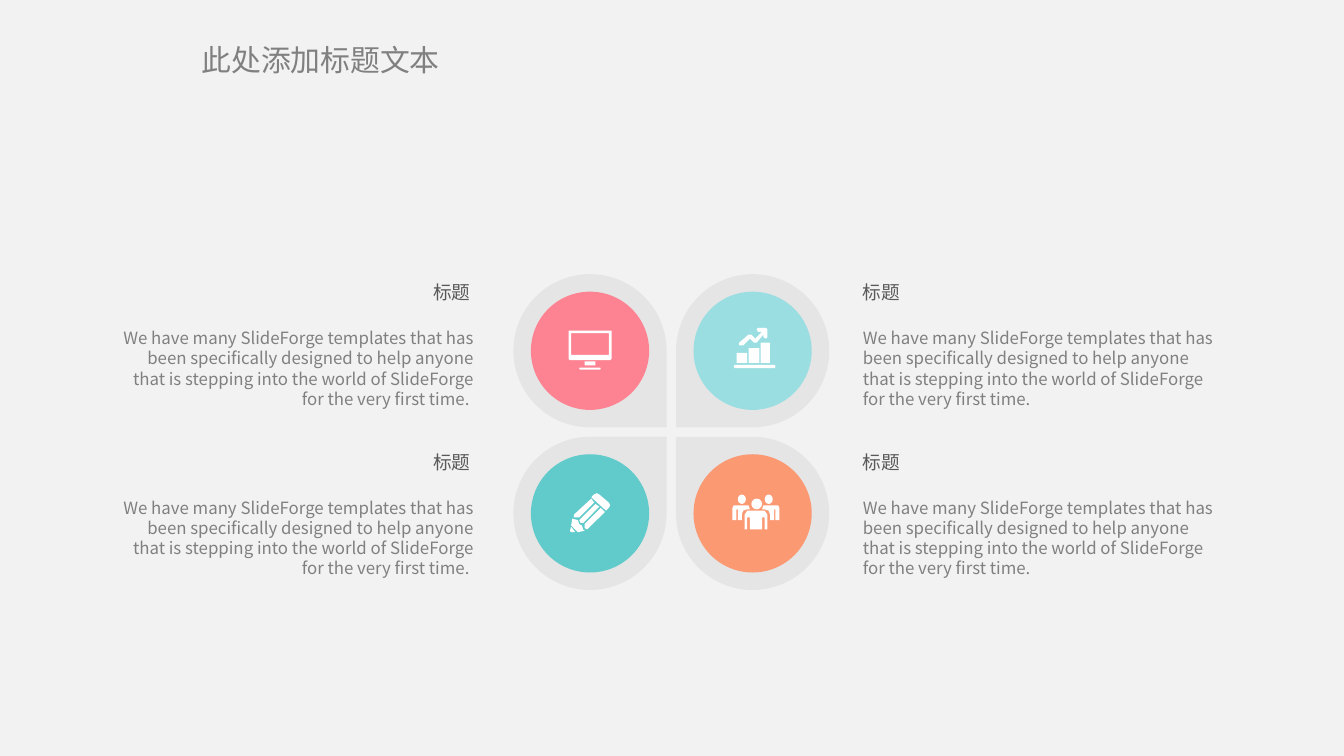
from lxml.etree import SubElement
from pptx import Presentation
from pptx.dml.color import RGBColor as RGB
from pptx.enum.shapes import MSO_SHAPE as Shape
from pptx.enum.text import MSO_ANCHOR as Anchor, PP_ALIGN as Align
from pptx.oxml.ns import qn
from pptx.util import Inches, Pt

FONT = "Noto Sans CJK SC"
PAPER = RGB(0xF2, 0xF2, 0xF2)
PETAL = RGB(0xD9, 0xD9, 0xD9)
WHITE = RGB(0xFF, 0xFF, 0xFF)
DARK = RGB(0x59, 0x59, 0x59)
GREY = RGB(0x80, 0x80, 0x80)
PINK = RGB(0xFD, 0x83, 0x92)
AQUA = RGB(0x9B, 0xDE, 0xE2)
TEAL = RGB(0x61, 0xCA, 0xCB)
CORAL = RGB(0xFB, 0x99, 0x73)

BODY = ("We have many SlideForge templates that has been specifically "
        "designed to help anyone that is stepping into the world of "
        "SlideForge for the very first time.")

SIZE, STEP, DISC = 1.14, 1.21, 0.88   # petal side, petal pitch, disc diameter
UNIT = Inches(0.01)                   # icon grid, from the petal's corner

# Icon parts: (preset, left, top, width, height) or a list of outlines
MONITOR = [
    [[(42, 41.5), (72, 41.5), (73, 42.5), (73, 63), (72, 64), (42, 64),
      (41, 63), (41, 42.5)],
     [(43, 44), (71, 44), (71, 60), (43, 60)]],
    (Shape.RECTANGLE, 53, 65, 8, 3),
    (Shape.ROUNDED_RECTANGLE, 49, 69.5, 16, 1.5),
]
CHART = [
    (Shape.ROUNDED_RECTANGLE, 43, 67.5, 31, 2.5),
    (Shape.RECTANGLE, 63, 51, 7, 15),
    (Shape.RECTANGLE, 54, 55, 8, 11),
    (Shape.RECTANGLE, 45, 58.5, 8, 7.5),
    [[(50, 53), (55, 48), (58, 51), (60, 51), (65, 45), (65, 47), (67, 48),
      (68, 47), (68, 41), (67, 40), (61, 40), (60, 41), (61, 43), (64, 43),
      (59, 48), (56, 45), (54, 45), (47, 51), (47, 53)]],
]
PENCIL = [
    [[(42, 70), (43, 71), (46, 71), (43, 67)]],
    [[(71, 49), (64, 43), (62, 42), (60, 43), (58, 45), (69, 55), (71, 53),
      (72, 51)]],
    [[(61, 50), (50, 61), (49, 62), (50, 64), (52, 64), (64, 52)]],
    [[(45, 60), (48, 60), (49, 60), (60, 49), (58, 46), (45, 58)]],
    [[(52, 69), (51, 66), (49, 65), (48, 62), (44, 61), (44, 60), (43, 66),
      (48, 71), (53, 70)]],
    [[(53, 65), (53, 68), (55, 69), (68, 56), (65, 53)]],
]
SIDE = [(74, 51), (65, 51), (64, 54), (66, 54), (69, 55), (70, 58), (70, 62),
        (73, 62), (73, 54), (74, 54), (74, 62), (77, 62), (77, 53), (76, 51)]
PEOPLE = [
    (Shape.OVAL, 66, 43, 6, 7),
    (Shape.OVAL, 46, 43, 6, 7),
    (Shape.OVAL, 56, 46, 8, 8),
    [[(66, 55), (53, 55), (51, 58), (51, 69), (53, 69), (53, 60), (55, 60),
      (55, 69), (64, 69), (64, 60), (66, 60), (66, 69), (68, 69), (68, 58)]],
    [SIDE],
    [[(119 - x, y) for x, y in SIDE]],
]

# Column, row, turn of the petal, disc colour, icon
ITEMS = [
    (0, 0, 90, PINK, MONITOR),
    (1, 0, 180, AQUA, CHART),
    (0, 1, 0, TEAL, PENCIL),
    (1, 1, 270, CORAL, PEOPLE),
]


def paint(shape, color):
    shape.shadow.inherit = False
    shape.fill.solid()
    shape.fill.fore_color.rgb = color
    shape.line.fill.background()


def style(par, size, color, align):
    par.alignment = align
    par.font.name, par.font.size = FONT, Pt(size)
    par.font.color.rgb = color
    ea = SubElement(par.font._element, qn("a:ea"))
    ea.set("typeface", FONT)


def add_title(slide, x, y, w, h):
    title = slide.shapes.title
    title.left, title.top = Inches(x), Inches(y)
    title.width, title.height = Inches(w), Inches(h)
    frame = title.text_frame
    frame.text = "此处添加标题文本"
    frame.word_wrap = False
    frame.vertical_anchor = Anchor.TOP
    style(frame.paragraphs[0], 16, GREY, Align.LEFT)


def add_icon(slide, x, y, parts):
    shapes = slide.shapes.add_group_shape().shapes
    left, top = Inches(x), Inches(y)
    for part in parts:
        if isinstance(part, tuple):
            kind, *box = part
            px, py, w, h = (int(v * UNIT) for v in box)
            shape = shapes.add_shape(kind, left + px, top + py, w, h)
            if kind == Shape.ROUNDED_RECTANGLE:
                shape.adjustments[0] = 0.5
        else:
            first, *holes = part
            pen = shapes.build_freeform(*first[0], scale=UNIT)
            pen.add_line_segments(first[1:])
            for hole in holes:
                pen.move_to(*hole[0])
                pen.add_line_segments(hole[1:])
            shape = pen.convert_to_shape(left, top)
        paint(shape, WHITE)


def add_petal(slide, x, y, turn, color, icon):
    # Half-transparent teardrop pointing at the centre
    drop = slide.shapes.add_shape(Shape.TEAR, Inches(x), Inches(y),
                                  Inches(SIZE), Inches(SIZE))
    drop.rotation = turn
    paint(drop, PETAL)
    tint = drop._element.spPr.find(qn("a:solidFill"))[0]
    SubElement(tint, qn("a:alpha")).set("val", "50000")
    # Disc and icon
    gap = (SIZE - DISC) / 2
    disc = slide.shapes.add_shape(Shape.OVAL, Inches(x + gap), Inches(y + gap),
                                  Inches(DISC), Inches(DISC))
    paint(disc, color)
    add_icon(slide, x, y, icon)


def add_text(slide, x, y, w, h, text, size, color, align):
    box = slide.shapes.add_textbox(Inches(x), Inches(y), Inches(w), Inches(h))
    frame = box.text_frame
    frame.word_wrap = True
    frame.margin_left = frame.margin_right = 0
    frame.margin_top = frame.margin_bottom = 0
    frame.text = text
    style(frame.paragraphs[0], size, color, align)
    return frame


def add_note(slide, x, y, w, right):
    align = Align.RIGHT if right else Align.LEFT
    head = x + w - 1.61 if right else x
    frame = add_text(slide, head, y, 1.59, 0.27, "标题", 10, DARK, align)
    frame.vertical_anchor = Anchor.MIDDLE
    body = BODY + " " if right else BODY
    frame = add_text(slide, x, y + 0.4, w, 0.61, body, 9, GREY, align)
    frame.paragraphs[0].line_spacing = Pt(10.8)


def main():
    deck = Presentation()
    deck.slide_width = Inches(10)
    deck.slide_height = deck.slide_width * 9 // 16
    slide = deck.slides.add_slide(deck.slide_layouts[5])
    slide.background.fill.solid()
    slide.background.fill.fore_color.rgb = PAPER
    add_title(slide, 1.4, 0.26, 2, 0.37)
    for col, row, turn, color, icon in ITEMS:
        add_petal(slide, 3.82 + col * STEP, 2.04 + row * STEP,
                  turn, color, icon)
        add_note(slide, 6.42 if col else 0.86, 2.04 + row * 1.26, 2.66,
                 right=col == 0)
    deck.save("out.pptx")


if __name__ == "__main__":
    main()
